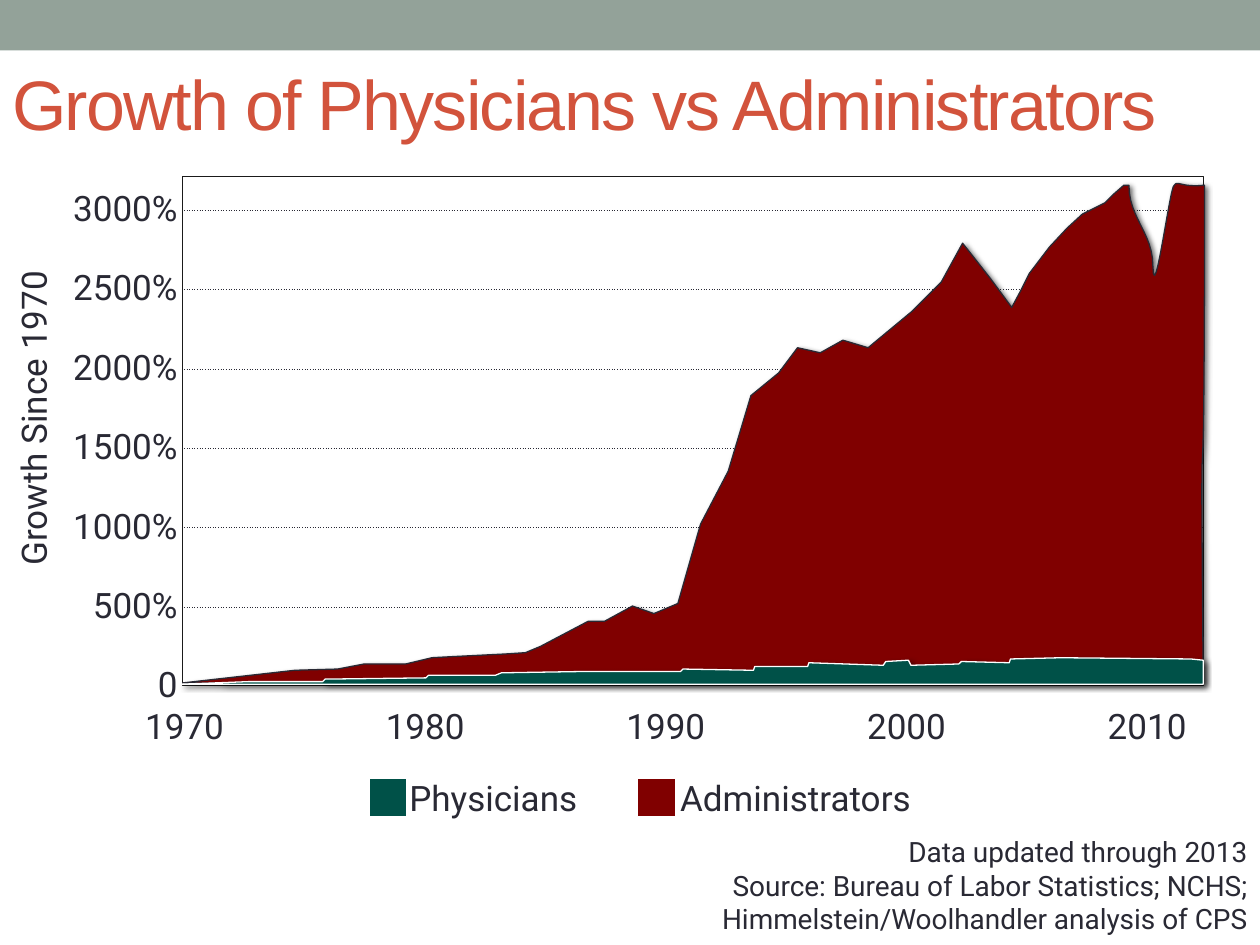
from lxml import etree
from pptx import Presentation, util as u
from pptx.dml.color import RGBColor
from pptx.enum import shapes, text
from pptx.oxml import parse_xml
from pptx.oxml.ns import nsdecls, qn

INK, PHYSICIANS, ADMINISTRATORS = "292934", "005148", "800000"
NO_GRID_STYLE = "{2D5ABB26-0587-4C30-8999-92F81FD0307C}"
hue = RGBColor.from_string
align = text.PP_ALIGN

deck = Presentation()
deck.slide_width, deck.slide_height = u.Inches(10), u.Inches(7.5)
slide = deck.slides.add_slide(deck.slide_layouts[6])
col = deck.slide_width / 10
row = deck.slide_height / 7.5


def write(frame, words, size=20, font="Roboto", color=INK, side=align.LEFT, anchor="TOP", spacing=None):
    frame.word_wrap = True
    frame.vertical_anchor = text.MSO_ANCHOR[anchor]
    for index, line in enumerate(words.split("\n")):
        paragraph = frame.add_paragraph() if index else frame.paragraphs[0]
        paragraph.alignment = side
        run = paragraph.add_run()
        run.text = line
        run.font.size, run.font.name = u.Pt(size), font
        run.font.color.rgb = hue(color)
        if spacing is not None:
            run.font._element.set("spc", str(spacing * 100))


def paint(shape, fill, line=None, cast=False):
    shape.shadow.inherit = False
    shape.fill.solid()
    shape.fill.fore_color.rgb = hue(fill)
    if line:
        shape.line.color.rgb = hue(line)
        shape.line.width = u.Pt(0.75)
    else:
        shape.line.fill.background()
    if cast:
        effects = shape.element.spPr.find(qn("a:effectLst"))
        shade = etree.SubElement(effects, qn("a:outerShdw"), blurRad=str(u.Pt(3)), dist=str(u.Pt(2)),
                                 dir="2700000", algn="tl", rotWithShape="0")
        black = etree.SubElement(shade, qn("a:srgbClr"), val="000000")
        etree.SubElement(black, qn("a:alpha"), val="60000")


rectangle = shapes.MSO_SHAPE.RECTANGLE
for left, top, width, height, fill, line in [
    (0, 0, 10, 0.4, "93A299", None),
    (1.45, 1.4, 8.1, 4.04, "FFFFFF", "1A1A1A"),
    (2.93, 6.18, 0.3, 0.3, PHYSICIANS, "FFFFFF"),
    (5.06, 6.18, 0.3, 0.3, ADMINISTRATORS, "FFFFFF"),
]:
    block = slide.shapes.add_shape(rectangle, int(left * col), int(top * row), int(width * col), int(height * row))
    paint(block, fill, line)

percents = [["3000%"], ["2500%"], ["2000%"], ["1500%"], ["1000%"], ["500%"], ["0"]]
decades = [["1970", "1980", "1990", "2000", "2010"]]
for left, top, col_width, row_height, labels, side, dotted in [
    (1.46, 1.67, 8.09, 0.63, [[""]] * 5, align.LEFT, True),
    (0.34, 1.45, 1.17, 0.63, percents, align.RIGHT, False),
    (0.51, 5.56, 1.91, 0.41, decades, align.CENTER, False),
]:
    rows, cols = len(labels), len(labels[0])
    grid = slide.shapes.add_table(rows, cols, int(left * col), int(top * row),
                                  int(cols * col_width * col), int(rows * row_height * row))
    grid.table.first_row = grid.table.horz_banding = False
    for style in grid.element.iter(qn("a:tableStyleId")):
        style.text = NO_GRID_STYLE
    for r, line in enumerate(labels):
        for c, label in enumerate(line):
            cell = grid.table.cell(r, c)
            cell.fill.background()
            if label:
                write(cell.text_frame, label, side=side)
            if dotted:
                for place, edge in enumerate(["lnT", "lnB"]):
                    cell._tc.get_or_add_tcPr().insert(place, parse_xml(
                        f'<a:{edge} {nsdecls("a")} w="9525"><a:solidFill><a:srgbClr val="{INK}"/></a:solidFill>'
                        f'<a:prstDash val="sysDot"/></a:{edge}>'))

source = "Data updated through 2013\nSource: Bureau of Labor Statistics; NCHS; Himmelstein/Woolhandler analysis of CPS"
for left, top, width, height, turn, words, look in [
    (0, 0.19, 10, 1.25, 0, "Growth of Physicians vs Administrators",
     dict(size=40, font="Arial", color="D2533C", anchor="MIDDLE", spacing=-1)),
    (3.7, 6.57, 6.3, 0.91, 0, source, dict(size=16, side=align.RIGHT, anchor="MIDDLE")),
    (-1.02, 3.1, 2.57, 0.44, 270, "Growth Since 1970", dict(side=align.CENTER)),
    (3.15, 6.11, 1.78, 0.44, 0, "Physicians", {}),
    (5.3, 6.11, 2.57, 0.44, 0, "Administrators", {}),
]:
    label = slide.shapes.add_textbox(int(left * col), int(top * row), int(width * col), int(height * row))
    label.rotation = turn
    write(label.text_frame, words, **look)

administrators = [
    (1.45, 5.42), (2.34, 5.32), (2.68, 5.31), (2.89, 5.27), (3.22, 5.27), (3.43, 5.22), (3.62, 5.21),
    (4.02, 5.19), (4.17, 5.18), (4.29, 5.13), (4.67, 4.93), (4.8, 4.93), (5.02, 4.81), (5.19, 4.87),
    (5.38, 4.79), (5.56, 4.16), (5.78, 3.74), (5.96, 3.14), (6.18, 2.96), (6.33, 2.76), (6.51, 2.8),
    (6.69, 2.7), (6.89, 2.76), (7.24, 2.47), (7.47, 2.24), (7.64, 1.93), (7.86, 2.21), (8.03, 2.44),
    (8.1, 2.31), (8.17, 2.17), (8.33, 1.96), (8.47, 1.81), (8.59, 1.7), (8.77, 1.61), (8.84, 1.54),
    (8.92, 1.47), (8.96, 1.47),
]
recent_curves = [
    [(8.96, 1.73), (9.15, 1.85), (9.15, 2.11)],
    [(9.16, 2.47), (9.29, 1.45), (9.32, 1.47)],
    [(9.35, 1.43), (9.37, 1.49), (9.56, 1.47)],
    [(9.56, 5.19), (9.52, 2.17), (9.55, 5.42)],
]
steps = 12
for pull, push, finish in recent_curves:
    start = administrators[-1]
    for step in range(1, steps + 1):
        t = step / steps
        administrators.append(tuple(
            (1 - t) ** 3 * a + 3 * (1 - t) ** 2 * t * b + 3 * (1 - t) * t ** 2 * c + t ** 3 * d
            for a, b, c, d in zip(start, pull, push, finish)))

physicians = [
    (1.44, 5.43), (9.55, 5.43), (9.55, 5.24), (9.45, 5.23), (8.42, 5.22), (8.02, 5.23), (8.01, 5.26),
    (7.63, 5.25), (7.61, 5.27), (7.23, 5.28), (7.21, 5.24), (7.03, 5.25), (7.01, 5.28), (6.42, 5.26),
    (6.41, 5.29), (5.99, 5.29), (5.98, 5.32), (5.42, 5.31), (5.4, 5.33), (4.59, 5.33), (3.98, 5.34),
    (3.93, 5.36), (3.4, 5.36), (3.38, 5.38), (2.58, 5.39), (2.56, 5.41), (1.97, 5.41),
]
for outline, fill, line in [(administrators, ADMINISTRATORS, INK), (physicians, PHYSICIANS, "FFFFFF")]:
    corners = [(int(x * col), int(y * row)) for x, y in outline]
    pen = slide.shapes.build_freeform(*corners[0])
    pen.add_line_segments(corners[1:], close=True)
    paint(pen.convert_to_shape(), fill, line, cast=True)

deck.save("out.pptx")
